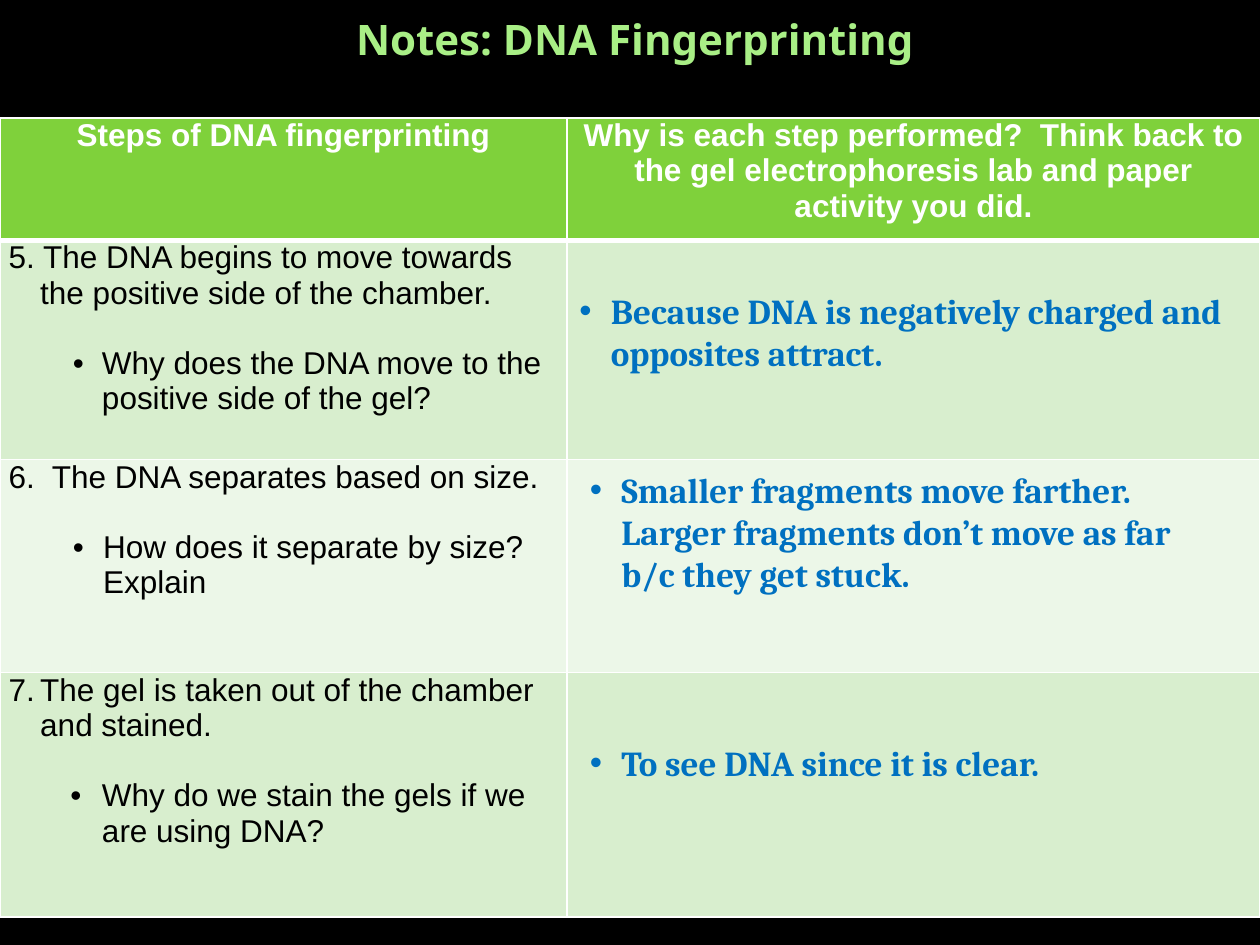
from lxml import etree
from pptx import Presentation
from pptx.dml.color import RGBColor
from pptx.enum import text
from pptx.oxml import ns
from pptx.util import Pt

GREEN, PALE, PALER = "7FD13B", "D8EECE", "ECF7E8"
WHITE, BLACK, BLUE, TITLE_GREEN = "FFFFFF", "000000", "0070C0", "A9EF86"
COLUMNS = (324, 396)
ROWS = (69.8, 125.3, 121.7, 139.7)
HEADINGS = (
    "Steps of DNA fingerprinting",
    "Why is each step performed?  Think back to the gel electrophoresis lab "
    "and paper activity you did.",
)
# step, number generated in front of it, question, question indent and hang
STEPS = (
    ("5. The DNA begins to move towards the positive side of the chamber.", None,
     "Why does the DNA move to the positive side of the gel?", 53.3, 16.6),
    ("6.  The DNA separates based on size.", None,
     "How does it separate by size?  Explain", 54, 17.3),
    ("The gel is taken out of the chamber and stained.", 7,
     "Why do we stain the gels if we are using DNA?", 53.3, 18),
)
ANSWERS = (
    ("Because DNA is negatively charged and opposites attract.", 324, 162, 396, 55.4),
    ("Smaller fragments move farther.  Larger fragments don’t move as far "
     "b/c they get stuck.", 330, 264.2, 372, 80),
    ("To see DNA since it is clear.", 330, 420, 372, 31.7),
)


def color(value):
    return RGBColor.from_string(value)


def add_run(paragraph, words, font, size, fill, bold=False):
    run = paragraph.add_run()
    run.text = words
    run.font.name, run.font.size, run.font.bold = font, Pt(size), bold
    run.font.color.rgb = color(fill)


def indent(paragraph, left, hang, number=None, bullet=False):
    """Set a hanging indent, with a bullet or a generated number if asked."""
    properties = paragraph._p.get_or_add_pPr()
    properties.set("marL", str(Pt(left)))
    properties.set("indent", str(-Pt(hang)))
    if number:
        etree.SubElement(properties, ns.qn("a:buAutoNum"),
                         type="arabicPeriod", startAt=str(number))
    elif bullet:
        etree.SubElement(properties, ns.qn("a:buFont"), typeface="Arial")
        etree.SubElement(properties, ns.qn("a:buChar"), char="•")


def add_text_box(slide, left, top, width, height):
    frame = slide.shapes.add_textbox(Pt(left), Pt(top), Pt(width), Pt(height)).text_frame
    frame.word_wrap = True
    return frame


def add_title(slide):
    frame = add_text_box(slide, 41.8, 0, 648, 44.6)
    frame.vertical_anchor = text.MSO_ANCHOR.MIDDLE
    paragraph = frame.paragraphs[0]
    paragraph.alignment = text.PP_ALIGN.CENTER
    add_run(paragraph, "Notes: DNA Fingerprinting ", "Noto Sans", 24, TITLE_GREEN, True)


def set_borders(cell, top, bottom):
    properties = cell._tc.get_or_add_tcPr()
    widths = {"a:lnL": 1, "a:lnR": 1, "a:lnT": top, "a:lnB": bottom}
    for position, (tag, width) in enumerate(widths.items()):
        line = etree.Element(ns.qn(tag), w=str(Pt(width)))
        fill = etree.SubElement(line, ns.qn("a:solidFill"))
        etree.SubElement(fill, ns.qn("a:srgbClr"), val=WHITE)
        properties.insert(position, line)


def style_cell(cell, fill, top, bottom):
    cell.margin_left = cell.margin_right = Pt(5)
    cell.margin_top = cell.margin_bottom = 0
    cell.fill.solid()
    cell.fill.fore_color.rgb = color(fill)
    set_borders(cell, top, bottom)


def write_step(cell, step, number, question, left, hang):
    paragraph = cell.text_frame.paragraphs[0]
    indent(paragraph, 18, 18, number)
    add_run(paragraph, step, "Arial", 18, BLACK)
    paragraph = cell.text_frame.add_paragraph()
    paragraph.space_before = Pt(20.2)
    indent(paragraph, left, hang, bullet=True)
    add_run(paragraph, question, "Arial", 18, BLACK)


def add_steps_table(slide):
    table = slide.shapes.add_table(len(ROWS), len(COLUMNS), 0, Pt(67.5),
                                   Pt(sum(COLUMNS)), Pt(sum(ROWS))).table
    for column, width in zip(table.columns, COLUMNS):
        column.width = Pt(width)
    for index, (row, height) in enumerate(zip(table.rows, ROWS)):
        row.height = Pt(height)
        fill = (GREEN, PALE, PALER, PALE)[index]
        for cell in row.cells:
            style_cell(cell, fill, 3 if index == 1 else 1, 3 if index == 0 else 1)
    for column, heading in enumerate(HEADINGS):
        paragraph = table.cell(0, column).text_frame.paragraphs[0]
        paragraph.alignment = text.PP_ALIGN.CENTER
        add_run(paragraph, heading, "Arial", 18, WHITE, True)
    for index, step in enumerate(STEPS, 1):
        write_step(table.cell(index, 0), *step)


def add_answer(slide, words, *box):
    paragraph = add_text_box(slide, *box).paragraphs[0]
    indent(paragraph, 18, 18, bullet=True)
    add_run(paragraph, words, "Cambria", 20, BLUE, True)


def main():
    presentation = Presentation()
    presentation.slide_width, presentation.slide_height = Pt(720), Pt(540)
    slide = presentation.slides.add_slide(presentation.slide_layouts[6])
    slide.background.fill.solid()
    slide.background.fill.fore_color.rgb = color(BLACK)
    add_title(slide)
    add_steps_table(slide)
    for answer in ANSWERS:
        add_answer(slide, *answer)
    presentation.save("out.pptx")


if __name__ == "__main__":
    main()
